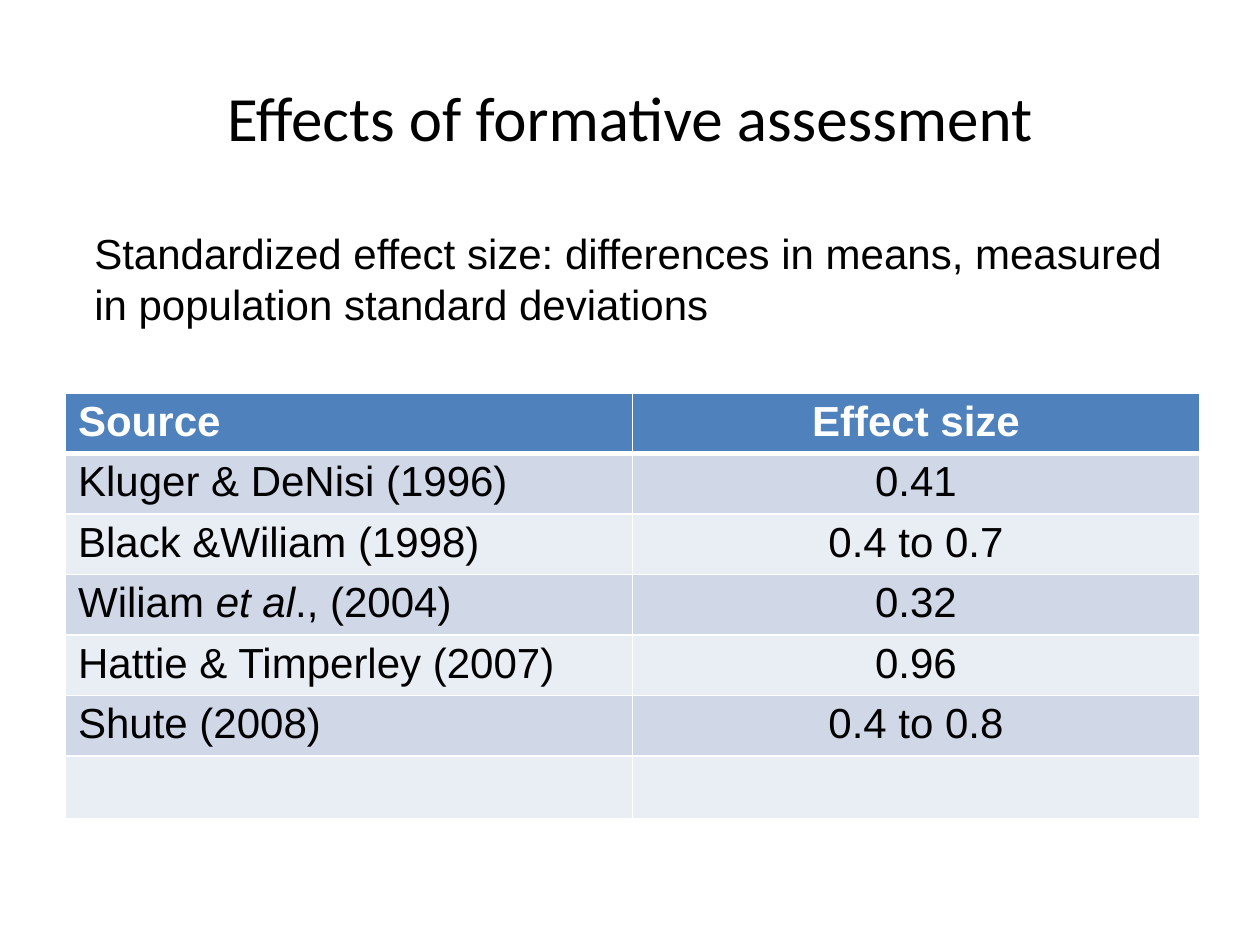
from lxml import etree
from pptx import Presentation
from pptx.dml.color import RGBColor
from pptx.enum.text import MSO_ANCHOR, PP_ALIGN
from pptx.oxml.ns import qn
from pptx.util import Inches, Pt

LEFT, CENTER = PP_ALIGN.LEFT, PP_ALIGN.CENTER
MIDDLE = MSO_ANCHOR.MIDDLE
BLACK, WHITE = "000000", "FFFFFF"
HEADER_FILL, BANDS = "4F81BD", ("E9EDF4", "D0D8E8")

# Each source is a list of spans; every second span is italic.
ROWS = [
    (["Source"], "Effect size"),
    (["Kluger & DeNisi (1996)"], "0.41"),
    (["Black &Wiliam (1998)"], "0.4 to 0.7"),
    (["Wiliam", " et al", "., (2004)"], "0.32"),
    (["Hattie & Timperley (2007)"], "0.96"),
    (["Shute (2008)"], "0.4 to 0.8"),
    ([], ""),
]


def write(para, spans, size, font="Arial", color=BLACK, bold=False, align=LEFT):
    """Fill a paragraph with spans, setting every second one in italics."""
    para.alignment = align
    for index, text in enumerate(spans):
        span = para.add_run()
        span.text = text
        span.font.name = font
        span.font.size = Pt(size)
        span.font.bold = bold
        span.font.italic = index % 2 == 1
        span.font.color.rgb = RGBColor.from_string(color)


def set_borders(cell, widths):
    """Draw white cell borders; widths are points for left, right, top, bottom."""
    properties = cell._tc.get_or_add_tcPr()
    for index, (side, width) in enumerate(zip("LRTB", widths)):
        line = etree.Element(qn(f"a:ln{side}"), w=str(Pt(width)))
        fill = etree.SubElement(line, qn("a:solidFill"))
        etree.SubElement(fill, qn("a:srgbClr"), val=WHITE)
        properties.insert(index, line)


deck = Presentation()
deck.slide_width, deck.slide_height = Inches(10), Inches(7.5)
page = deck.slides.add_slide(deck.slide_layouts[6])

title = page.shapes.add_textbox(Inches(0.5), Inches(0.3), Inches(9), Inches(1.25))
title.text_frame.word_wrap = True
title.text_frame.vertical_anchor = MIDDLE
write(title.text_frame.paragraphs[0], ["Effects of formative assessment"], 36,
      font="Calibri", align=CENTER)

table = page.shapes.add_table(len(ROWS), 2, Inches(0.52), Inches(3.12),
                              Inches(9), Inches(3.32)).table
for row_index, (source, effect) in enumerate(ROWS):
    header = row_index == 0
    last = row_index == len(ROWS) - 1
    table.rows[row_index].height = Inches(0.5 if last else 0.47)
    fill = HEADER_FILL if header else BANDS[row_index % 2]
    color = WHITE if header else BLACK
    widths = (1, 1, 3 if row_index == 1 else 1, 3 if header else 1)
    effect_spans = [effect] if effect else []
    for column, (spans, align) in enumerate([(source, LEFT), (effect_spans, CENTER)]):
        cell = table.cell(row_index, column)
        cell.margin_top = cell.margin_bottom = Inches(0.04)
        cell.fill.solid()
        cell.fill.fore_color.rgb = RGBColor.from_string(fill)
        set_borders(cell, widths)
        write(cell.text_frame.paragraphs[0], spans, 24, color=color,
              bold=header, align=align)

definition = page.shapes.add_textbox(Inches(0.65), Inches(1.76), Inches(8.71), Inches(0.91))
definition.text_frame.word_wrap = True
write(definition.text_frame.paragraphs[0],
      ["Standardized effect size: differences in means, measured "
       "in population standard deviations"], 24)

deck.save("out.pptx")
